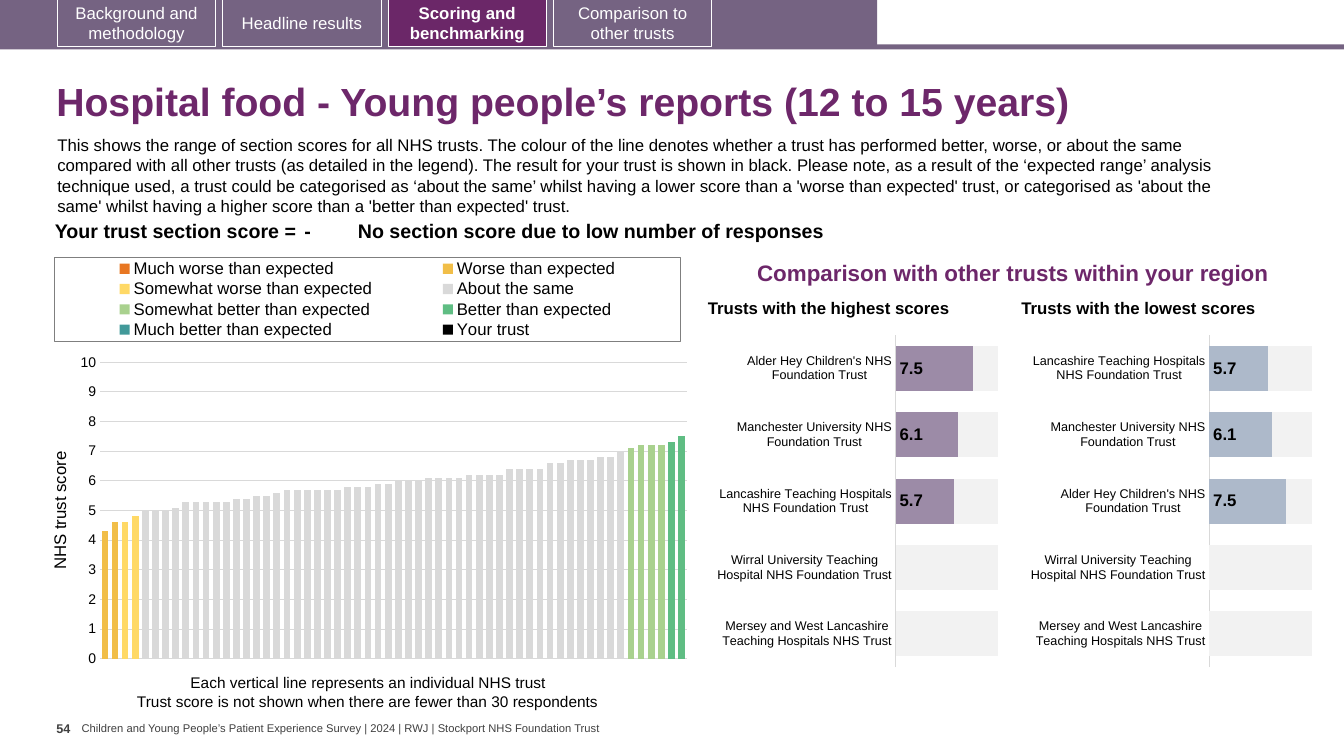
import copy
from dataclasses import dataclass

import pptx
import pptx.chart.data
import pptx.dml.color
import pptx.enum.chart
import pptx.enum.shapes
import pptx.enum.text
import pptx.oxml
import pptx.oxml.ns
import pptx.util

Inches, Pt = pptx.util.Inches, pptx.util.Pt
RGB = pptx.dml.color.RGBColor.from_string
ALIGN, ANCHOR = pptx.enum.text.PP_ALIGN, pptx.enum.text.MSO_ANCHOR
XL = pptx.enum.chart
qn = pptx.oxml.ns.qn


@dataclass(frozen=True)
class Theme:
    font: str = "Arial"
    chart_font: str = "Calibri"
    band: str = "756382"
    active: str = "6B2768"
    heading: str = "6D276A"
    ink: str = "000000"
    muted: str = "404040"
    paper: str = "FFFFFF"
    rule: str = "D9D9D9"
    frame: str = "7F7F7F"
    highest: str = "9C8BA7"
    lowest: str = "ADB9CA"
    remainder: str = "F2F2F2"
    title: int = 28
    subtitle: int = 16
    score: int = 14
    body: int = 12
    caption: int = 11
    tick: int = 10
    small: int = 9
    footer: int = 8


T = Theme()
BANDS = [
    ("Much worse than expected", "E87722", []),
    ("Worse than expected", "F1BE48", [4.3, 4.6]),
    ("Somewhat worse than expected", "FFD966", [4.6, 4.8]),
    ("About the same", T.rule,
     [5, 5, 5, 5.1] + [5.3] * 5 + [5.4] * 2 + [5.5] * 2 + [5.6] + [5.7] * 6 + [5.8] * 3
     + [5.9] * 2 + [6] * 3 + [6.1] * 4 + [6.2] * 4 + [6.4] * 4 + [6.6] * 2 + [6.7] * 3
     + [6.8] * 2 + [7]),
    ("Somewhat better than expected", "A9D18E", [7.1, 7.2, 7.2, 7.2]),
    ("Better than expected", "5FBD83", [7.3, 7.5]),
    ("Much better than expected", "419999", []),
    ("Your trust", T.ink, []),
]
SCORED = [("Alder Hey Children's NHS Foundation Trust", 7.5),
          ("Manchester University NHS Foundation Trust", 6.1),
          ("Lancashire Teaching Hospitals NHS Foundation Trust", 5.7)]
UNSCORED = [("Wirral University Teaching Hospital NHS Foundation Trust", None),
            ("Mersey and West Lancashire Teaching Hospitals NHS Trust", None)]
INTRO = (
    "This shows the range of section scores for all NHS trusts. The colour of the line denotes "
    "whether a trust has performed better, worse, or about the same compared with all other trusts "
    "(as detailed in the legend). The result for your trust is shown in black. Please note, as a "
    "result of the ‘expected range’ analysis technique used, a trust could be categorised as ‘about "
    "the same’ whilst having a lower score than a 'worse than expected' trust, or categorised as "
    "'about the same' whilst having a higher score than a 'better than expected' trust.")


def set_font(font, size, color=T.ink, bold=False, name=T.font):
    font.size, font.bold, font.name = Pt(size), bold, name
    font.color.rgb = RGB(color)


def write_text(tf, text, size=T.body, color=T.ink, bold=False, align=ALIGN.LEFT, spacing=None):
    p = tf.paragraphs[0]
    p.alignment, p.line_spacing = align, spacing
    r = p.add_run()
    r.text = text
    set_font(r.font, size, color, bold)


def add_text(slide, box, text, anchor=ANCHOR.TOP, inset=(0.1, 0.05), **fmt):
    tf = slide.shapes.add_textbox(*map(Inches, box)).text_frame
    tf.word_wrap, tf.vertical_anchor = True, anchor
    tf.margin_left = tf.margin_right = Inches(inset[0])
    tf.margin_top = tf.margin_bottom = Inches(inset[1])
    write_text(tf, text, **fmt)


def add_rect(slide, box, fill, line=None):
    sp = slide.shapes.add_shape(pptx.enum.shapes.MSO_SHAPE.RECTANGLE, *map(Inches, box))
    sp.shadow.inherit = False
    sp.fill.solid()
    sp.fill.fore_color.rgb = RGB(fill)
    if line:
        sp.line.color.rgb, sp.line.width = RGB(line), Pt(0.75)
    else:
        sp.line.fill.background()
    return sp


def nav_bar(slide, box, tabs, active):
    x, y, w, h = box
    add_rect(slide, (x, y + h - 0.05, w, 0.05), T.band)
    add_rect(slide, (x, y, 8.7, h - 0.02), T.band)
    for i, label in enumerate(tabs):
        on = i == active
        sp = add_rect(slide, (x + 0.57 + 1.64 * i, y, 1.57, h - 0.03),
                      T.active if on else T.band, T.paper)
        sp.text_frame.word_wrap, sp.text_frame.vertical_anchor = True, ANCHOR.MIDDLE
        write_text(sp.text_frame, label, color=T.paper, bold=on, align=ALIGN.CENTER)


def heading(slide, box):
    x, y, w, _ = box
    add_text(slide, (x, y, w, 0.72), "Hospital food - Young people’s reports (12 to 15 years)",
             anchor=ANCHOR.MIDDLE, size=T.title, color=T.heading, bold=True, spacing=0.9)
    add_text(slide, (x + 0.01, y + 0.62, 12.13, 0.91), INTRO)


def score_row(slide, box):
    cells = [("Your trust section score =", 2.63, 0.04, ALIGN.RIGHT), ("-", 0.57, 0.04, ALIGN.LEFT),
             ("No section score due to low number of responses", 8.5, 0, ALIGN.LEFT)]
    table = slide.shapes.add_table(1, len(cells), *map(Inches, box)).table
    table.first_row = table.horz_banding = False
    for i, (text, width, inset, align) in enumerate(cells):
        table.columns[i].width = Inches(width)
        cell = table.cell(0, i)
        cell.fill.background()
        cell.margin_left = cell.margin_right = Inches(inset)
        cell.margin_top = cell.margin_bottom = Inches(0.04)
        write_text(cell.text_frame, text, size=T.score, bold=True, align=align)


def chart_xml(xml):
    return pptx.oxml.parse_xml(xml.replace(">", " " + pptx.oxml.ns.nsdecls("c", "a") + ">", 1))


def layout(x, y, w, h, target=""):
    return chart_xml(f'<c:layout><c:manualLayout>{target}<c:xMode val="edge"/><c:yMode val="edge"/>'
                     f'<c:x val="{x}"/><c:y val="{y}"/><c:w val="{w}"/><c:h val="{h}"/>'
                     '</c:manualLayout></c:layout>')


def add_bars(slide, box, kind, cats, series, gap, plot):
    """Add a bar chart; series holds (name, colour, values), plot the inner area as fractions."""
    data = pptx.chart.data.CategoryChartData(number_format="0.0")
    data.categories = cats
    for name, _, values in series:
        data.add_series(name, values)
    chart = slide.shapes.add_chart(kind, *map(Inches, box), data).chart
    chart.has_title = chart.has_legend = False
    set_font(chart.font, T.tick, name=T.chart_font)
    bars = chart.plots[0]
    bars.gap_width, bars.overlap, bars.vary_by_categories = gap, 100, False
    for s, (_, color, _) in zip(bars.series, series):
        s.format.fill.solid()
        s.format.fill.fore_color.rgb = RGB(color)
    axis = chart.value_axis
    axis.minimum_scale, axis.maximum_scale, axis.major_unit = 0, 10, 1
    area = chart._chartSpace.chart.plotArea
    for old in area.findall(qn("c:layout")):
        area.remove(old)
    area.insert(0, layout(*plot, target='<c:layoutTarget val="inner"/>'))
    return chart


def last_series_to_right_axis(chart):
    area = chart._chartSpace.chart.plotArea
    left = area.find(qn("c:barChart"))
    right = copy.deepcopy(left)
    left.remove(left.findall(qn("c:ser"))[-1])
    for ser in right.findall(qn("c:ser"))[:-1]:
        right.remove(ser)
    left.addnext(right)
    cat, val = (copy.deepcopy(area.find(qn(tag))) for tag in ("c:catAx", "c:valAx"))
    ids = {cat.find(qn("c:axId")).get("val"): "5001", val.find(qn("c:axId")).get("val"): "5002"}
    for part in (right, cat, val):
        for node in part.findall(qn("c:axId")) + part.findall(qn("c:crossAx")):
            node.set("val", ids[node.get("val")])
    for tag, value in (("axPos", "r"), ("crosses", "max"), ("tickLblPos", "none")):
        val.find(qn("c:" + tag)).set("val", value)
    val.remove(val.find(qn("c:majorGridlines")))
    area.findall(qn("c:valAx"))[-1].addnext(val)
    val.addnext(cat)


def trust_chart(slide, box):
    x, y, w, h = box
    total = sum(len(scores) for _, _, scores in BANDS)
    series, start = [], 0
    for name, color, scores in BANDS:
        end = start + len(scores)
        series.append((name, color, [None] * start + scores + [None] * (total - end)))
        start = end
    chart = add_bars(slide, (x, y, w, 4.21), XL.XL_CHART_TYPE.COLUMN_CLUSTERED,
                     [str(i + 1) for i in range(total)], series, 50, (0.083, 0.267, 0.91, 0.699))
    chart.category_axis.visible = False
    axis = chart.value_axis
    axis.format.line.fill.background()
    last_series_to_right_axis(chart)
    axis.major_tick_mark = XL.XL_TICK_MARK.NONE
    axis.major_gridlines.format.line.color.rgb = RGB(T.rule)
    axis.major_gridlines.format.line.width = Pt(0.75)
    axis.tick_labels.number_format, axis.tick_labels.number_format_is_linked = "0", False
    set_font(axis.tick_labels.font, T.tick)
    write_text(axis.axis_title.text_frame, "NHS trust score")
    chart.has_legend = True
    legend = chart.legend
    legend.position, legend.include_in_layout = XL.XL_LEGEND_POSITION.TOP, False
    set_font(legend.font, T.body)
    legend._element.find(qn("c:legendPos")).addnext(layout(0.013, 0.02, 0.97, 0.197))
    legend._element.find(qn("c:txPr")).addprevious(chart_xml(
        f'<c:spPr><a:ln w="9525"><a:solidFill><a:srgbClr val="{T.frame}"/></a:solidFill></a:ln></c:spPr>'))
    add_text(slide, (x + 1.33, y + 4.16, 3.75, 0.29),
             "Each vertical line represents an individual NHS trust", size=T.caption)
    add_text(slide, (x + 0.8, y + 4.35, 4.81, 0.29),
             "Trust score is not shown when there are fewer than 30 respondents", size=T.caption)


def ranking(slide, box, title, trusts, color):
    x, y, w, h = box
    add_text(slide, (x, y, w, 0.23), title, anchor=ANCHOR.BOTTOM, inset=(0, 0), bold=True, spacing=0.9)
    names, scores = zip(*trusts)
    rest = [round(10 - (s or 0), 1) for s in scores]
    chart = add_bars(slide, (x + 0.07, y + 0.31, w, h - 0.31), XL.XL_CHART_TYPE.BAR_STACKED, names,
                     [("Series 1", color, scores), ("Series 2", T.remainder, rest)],
                     47, (0.625, 0.025, 0.355, 0.96))
    chart.value_axis.visible = chart.value_axis.has_major_gridlines = False
    axis = chart.category_axis
    axis.reverse_order, axis.major_tick_mark = True, XL.XL_TICK_MARK.NONE
    axis.format.line.color.rgb, axis.format.line.width = RGB(T.rule), Pt(0.75)
    set_font(axis.tick_labels.font, T.small)
    labels = chart.plots[0].series[0].data_labels
    labels.show_value, labels.position = True, XL.XL_LABEL_POSITION.INSIDE_BASE
    labels.number_format, labels.number_format_is_linked = "0.0", False
    set_font(labels.font, T.body, bold=True)


def region_comparison(slide, box):
    x, y, w, h = box
    add_text(slide, (x + 0.49, y, 5.47, 0.51), "Comparison with other trusts within your region",
             anchor=ANCHOR.BOTTOM, inset=(0, 0), size=T.subtitle, color=T.heading, bold=True, spacing=0.9)
    sides = [("Trusts with the highest scores", SCORED + UNSCORED, T.highest),
             ("Trusts with the lowest scores", SCORED[::-1] + UNSCORED, T.lowest)]
    for i, side in enumerate(sides):
        ranking(slide, (x + 3.11 * i, y + 0.6, 2.87, h - 0.6), *side)


def footer(slide, box):
    x, y, w, h = box
    add_text(slide, (x, y, 0.25, h), "54", inset=(0, 0.05), size=T.small, color=T.muted, bold=True)
    add_text(slide, (x + 0.25, y + 0.06, w - 0.25, 0.13),
             "Children and Young People’s Patient Experience Survey | 2024 | RWJ | "
             "Stockport NHS Foundation Trust",
             anchor=ANCHOR.MIDDLE, inset=(0, 0), size=T.footer, color=T.muted)


def main():
    prs = pptx.Presentation()
    prs.slide_width, prs.slide_height = Inches(13.33), Inches(7.5)
    slide = prs.slides.add_slide(prs.slide_layouts[6])
    nav_bar(slide, (0, 0, 13.33, 0.49),
            ["Background and methodology", "Headline results", "Scoring and benchmarking",
             "Comparison to other trusts"], active=2)
    heading(slide, (0.46, 0.67, 12.49, 1.53))
    score_row(slide, (0.35, 2.15, 11.7, 0.31))
    trust_chart(slide, (0.46, 2.47, 6.41, 4.64))
    region_comparison(slide, (7.02, 2.33, 6.06, 4.34))
    footer(slide, (0.56, 7.1, 5.48, 0.4))
    prs.save("out.pptx")


if __name__ == "__main__":
    main()
